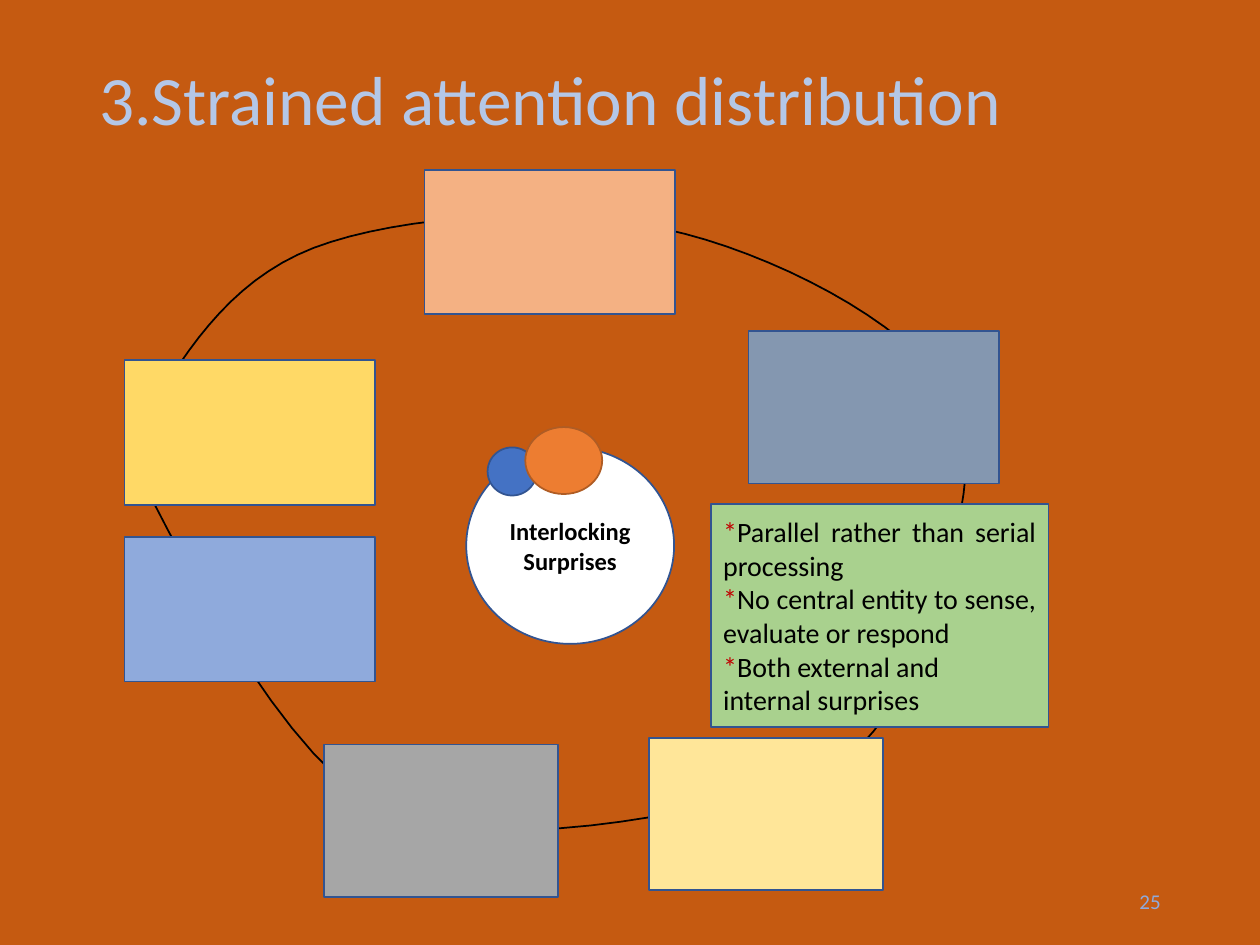
from pptx import Presentation
from pptx import util as u
from pptx.dml.color import RGBColor
from pptx.enum import shapes, text

COLORS = {
    "background": "C55A11", "title": "B4C7E7", "number": "8FAADC", "black": "000000",
    "star": "C00000", "outline": "325491", "peach": "F4B183", "slate": "8497B0",
    "green": "A9D18E", "cream": "FFE699", "gray": "A6A6A6", "sky": "8FAADC",
    "yellow": "FFD966", "white": "FFFFFF", "blue": "4472C4", "orange": "ED7D31",
    "rust": "AF5C24",
}
TITLE = "3.Strained attention distribution"
POINTS = [
    [("*", "star"), ("Parallel rather than serial processing", "black")],
    [("*", "star"), ("No central entity to sense, evaluate or respond", "black")],
    [("*", "star"), ("Both external and", "black")],
    [("internal surprises", "black")],
]
CENTER = [[("Interlocking Surprises", "black")]]
NUMBER = [[("25", "number")]]

RING_START = (2.77, 8.71)
RING_CURVES = [
    ((3.66, 7.21), (4.55, 5.69), (6.32, 5)),
    ((8.1, 4.32), (11.28, 4.14), (13.41, 4.62)),
    ((15.54, 5.08), (18.24, 6.48), (19.1, 7.85)),
    ((19.96, 9.19), (19.13, 11.4), (18.59, 12.75)),
    ((18.06, 14.07), (17.78, 15.21), (15.95, 15.8)),
    ((14.12, 16.38), (9.8, 17.32), (7.59, 16.23)),
    ((5.38, 15.14), (2.67, 9.25), (2.67, 9.25)),
]
RING_STEPS = 16

JUSTIFIED = {"size": 16, "align": text.PP_ALIGN.JUSTIFY}
CENTERED = {"size": 14, "align": text.PP_ALIGN.CENTER, "bold": True, "margin": 0.13}
RECTANGLES = [
    ((8.56, 3.43, 5.05, 2.9), "peach", None),
    ((15.09, 6.68, 5.05, 3.07), "slate", None),
    ((14.33, 10.16, 6.81, 4.5), "green", (POINTS, JUSTIFIED)),
    ((13.08, 14.88, 4.72, 3.07), "cream", None),
    ((6.53, 15.01, 4.72, 3.07), "gray", None),
    ((2.51, 10.82, 5.05, 2.92), "sky", None),
    ((2.51, 7.26, 5.05, 2.92), "yellow", None),
]
ELLIPSES = [
    ((9.4, 9.02, 4.19, 3.96), "white", "outline", (CENTER, CENTERED)),
    ((9.83, 9.02, 0.99, 0.97), "blue", "outline", None),
    ((10.59, 8.61, 1.55, 1.35), "orange", "rust", None),
]


def color(name):
    return RGBColor.from_string(COLORS[name])


def lengths(values):
    return [u.Cm(value) for value in values]


def write(shape, paragraphs, size, align, bold=False, margin=0.25, spacing=1.0):
    frame = shape.text_frame
    frame.word_wrap = True
    frame.auto_size = text.MSO_AUTO_SIZE.NONE
    frame.vertical_anchor = text.MSO_ANCHOR.MIDDLE
    frame.margin_left = frame.margin_right = u.Cm(margin)
    for index, runs in enumerate(paragraphs):
        paragraph = frame.add_paragraph() if index else frame.paragraphs[0]
        paragraph.alignment = align
        paragraph.line_spacing = spacing
        for words, ink in runs:
            run = paragraph.add_run()
            run.text = words
            run.font.name = "Calibri"
            run.font.size = u.Pt(size)
            run.font.bold = bold
            run.font.color.rgb = color(ink)


def outline(shape, ink):
    shape.shadow.inherit = False
    shape.line.color.rgb = color(ink)
    shape.line.width = u.Pt(1)


def add_block(slide, kind, place, fill, line, content):
    shape = slide.shapes.add_shape(kind, *lengths(place))
    shape.fill.solid()
    shape.fill.fore_color.rgb = color(fill)
    outline(shape, line)
    if content:
        paragraphs, style = content
        write(shape, paragraphs, **style)


def curve_points(start, curve):
    corners = [start, *curve]
    for step in range(1, RING_STEPS + 1):
        t = step / RING_STEPS
        weights = ((1 - t) ** 3, 3 * t * (1 - t) ** 2, 3 * t * t * (1 - t), t ** 3)
        yield lengths(sum(w * corner[axis] for w, corner in zip(weights, corners))
                      for axis in (0, 1))


def add_ring(slide):
    builder = slide.shapes.build_freeform(*lengths(RING_START))
    start = RING_START
    for curve in RING_CURVES:
        builder.add_line_segments(curve_points(start, curve), close=False)
        start = curve[-1]
    ring = builder.convert_to_shape()
    ring.fill.background()
    outline(ring, "black")


def main():
    """Build the slide on strained attention distribution."""
    presentation = Presentation()
    presentation.slide_width, presentation.slide_height = lengths((25.4, 19.05))
    slide = presentation.slides.add_slide(presentation.slide_layouts[5])
    slide.background.fill.solid()
    slide.background.fill.fore_color.rgb = color("background")

    title = slide.shapes.title
    title.left, title.top, title.width, title.height = lengths((1.75, 1.02, 23.37, 2.11))
    write(title, [[(TITLE, "title")]], size=39.6, align=text.PP_ALIGN.LEFT, spacing=0.9)
    number = slide.shapes.add_textbox(*lengths((17.93, 17.65, 5.72, 1.02)))
    write(number, NUMBER, size=12, align=text.PP_ALIGN.RIGHT)

    add_ring(slide)
    for place, fill, content in RECTANGLES:
        add_block(slide, shapes.MSO_SHAPE.RECTANGLE, place, fill, "outline", content)
    for place, fill, line, content in ELLIPSES:
        add_block(slide, shapes.MSO_SHAPE.OVAL, place, fill, line, content)
    presentation.save("out.pptx")


if __name__ == "__main__":
    main()
